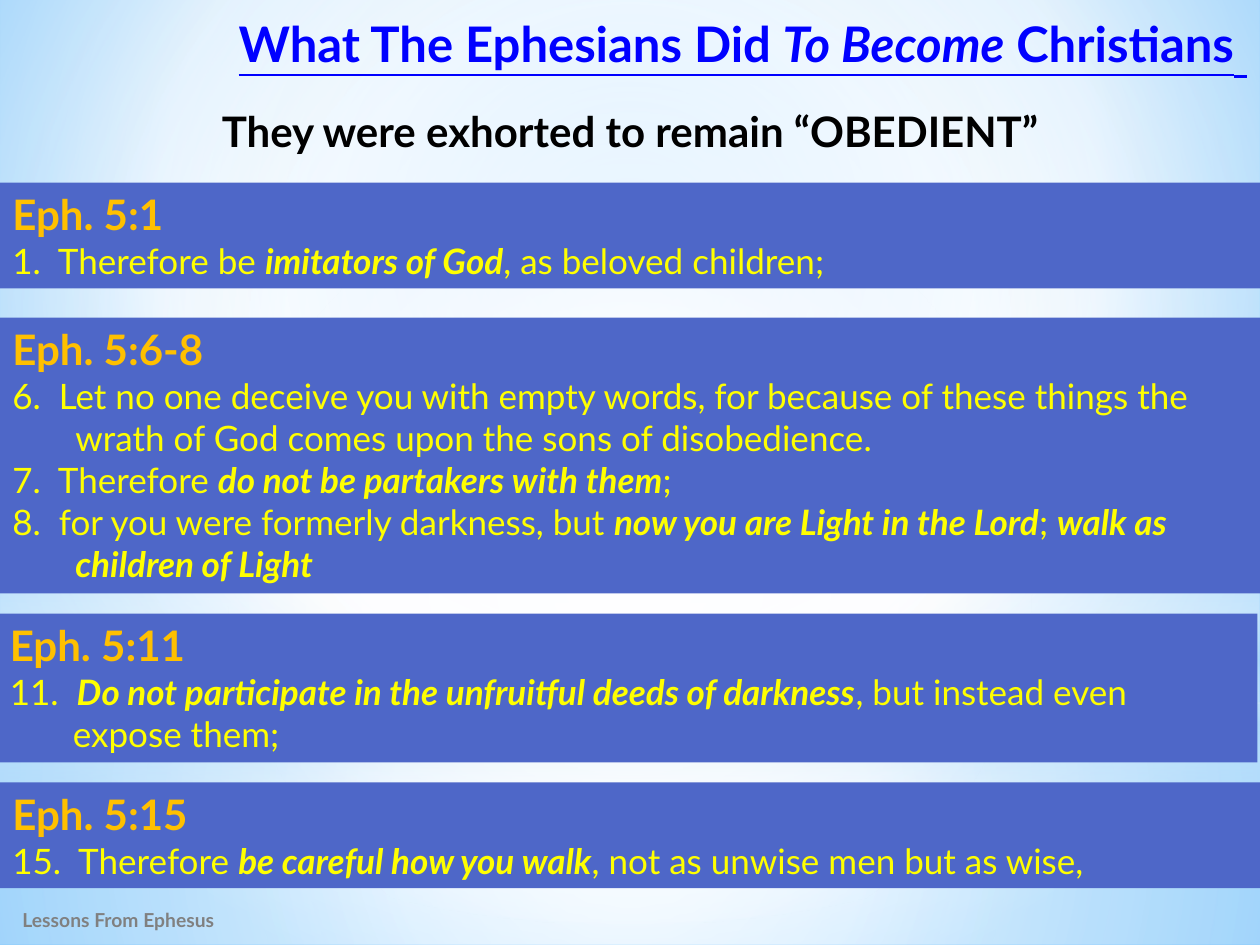
import pptx
import pptx.util
import pptx.dml.color
import pptx.enum.shapes
import pptx.enum.text
import pptx.oxml
import pptx.oxml.ns
from dataclasses import dataclass

Inches, Pt = pptx.util.Inches, pptx.util.Pt
SHAPE = pptx.enum.shapes.MSO_SHAPE
ALIGN = pptx.enum.text.PP_ALIGN
ANCHOR = pptx.enum.text.MSO_ANCHOR


@dataclass(frozen=True)
class Theme:
    font: str = "Lato"
    title: str = "0000FF"
    subtitle: str = "000000"
    panel: str = "4E67C8"
    reference: str = "FFC000"
    verse: str = "FFFF00"
    footer: str = "808080"
    white: str = "FFFFFF"
    sky: str = "B4DCFA"
    title_size: int = 28
    title_end_size: int = 32
    heading_size: int = 24
    verse_size: int = 20
    footer_size: int = 11


T = Theme()
CENTER = (50, 50, 50, 50)


def set_gradient(fill, element, stops, focus=None):
    """Stops are (position %, colour, opacity %); focus is l, t, r, b in %."""
    fill.gradient()
    old = element.find(".//" + pptx.oxml.ns.qn("a:gradFill"))
    gs = "".join(
        f'<a:gs pos="{pos * 1000}"><a:srgbClr val="{color}">'
        f'<a:alpha val="{alpha * 1000}"/></a:srgbClr></a:gs>'
        for pos, color, alpha in stops)
    if focus:
        sides = " ".join(f'{k}="{v * 1000}"' for k, v in zip("ltrb", focus))
        direction = f'<a:path path="circle"><a:fillToRect {sides}/></a:path>'
    else:
        direction = '<a:lin ang="5400000" scaled="0"/>'
    new = pptx.oxml.parse_xml(
        f'<a:gradFill {pptx.oxml.ns.nsdecls("a")} rotWithShape="1">'
        f'<a:gsLst>{gs}</a:gsLst>{direction}</a:gradFill>')
    old.getparent().replace(old, new)


def add_plain_shape(s, kind, box):
    sp = s.shapes.add_shape(kind, *map(Inches, box))
    sp.shadow.inherit = False
    sp.line.fill.background()
    return sp


def add_run(p, text, size, color, bold=False, italic=False, underline=None):
    r = p.add_run()
    r.text = text
    r.font.name = T.font
    r.font.size = Pt(size)
    r.font.bold = bold
    r.font.italic = italic
    r.font.underline = underline
    r.font.color.rgb = pptx.dml.color.RGBColor.from_string(color)


def add_text_box(s, box, align=ALIGN.LEFT, anchor=ANCHOR.TOP):
    tf = s.shapes.add_textbox(*map(Inches, box)).text_frame
    tf.word_wrap = True
    tf.vertical_anchor = anchor
    tf.paragraphs[0].alignment = align
    return tf.paragraphs[0]


def hang(p):
    pPr = p._p.get_or_add_pPr()
    pPr.set("marL", str(Inches(0.5)))
    pPr.set("indent", str(-Inches(0.5)))


def add_backdrop(s, width):
    set_gradient(s.background.fill, s._element,
                 [(0, "9ED5FF", 100), (60, T.white, 100), (100, "5BB9FF", 100)],
                 (20, 10, 20, 60))
    layers = [
        (SHAPE.RECTANGLE, 5.58, 1.92, CENTER,
         [(0, T.white, 91), (37, T.white, 76), (100, T.sky, 79)]),
        (SHAPE.RECTANGLE, 0, 5.58, CENTER,
         [(0, T.white, 89), (48, T.white, 62), (100, T.sky, 79)]),
        (SHAPE.RECTANGLE, 4.12, 2.5, None,
         [(0, T.white, 0), (29, T.white, 30), (45, T.sky, 40),
          (55, T.white, 26), (65, T.sky, 60), (100, T.white, 0)]),
        (SHAPE.OVAL, 1.75, 5.58, CENTER,
         [(0, T.white, 100), (56, T.white, 0)]),
    ]
    for kind, top, height, focus, stops in layers:
        sp = add_plain_shape(s, kind, (0, top, width, height))
        set_gradient(sp.fill, sp._element, stops, focus)


def add_title(s, box):
    p = add_text_box(s, box, ALIGN.RIGHT)
    for text, size, italic in [
            ("What The Ephesians Did ", T.title_size, False),
            ("To Become", T.title_size, True),
            (" Christians", T.title_size, False),
            (" ", T.title_end_size, False)]:
        add_run(p, text, size, T.title, True, italic, True)


def add_subtitle(s, box):
    p = add_text_box(s, box, ALIGN.CENTER)
    hang(p)
    add_run(p, "They were exhorted to remain “OBEDIENT”",
            T.heading_size, T.subtitle, True)


def add_footer(s, box):
    p = add_text_box(s, box, anchor=ANCHOR.MIDDLE)
    add_run(p, "Lessons From Ephesus", T.footer_size, T.footer, True)


def add_passage(s, box, reference, verses):
    """Each verse alternates plain and emphasised text."""
    sp = add_plain_shape(s, SHAPE.RECTANGLE, box)
    sp.fill.solid()
    sp.fill.fore_color.rgb = pptx.dml.color.RGBColor.from_string(T.panel)
    tf = sp.text_frame
    tf.word_wrap = True
    tf.vertical_anchor = ANCHOR.TOP
    p = tf.paragraphs[0]
    add_run(p, reference, T.heading_size, T.reference, True)
    for verse in verses:
        p = tf.add_paragraph()
        for i, text in enumerate(verse):
            strong = i % 2 == 1
            add_run(p, text, T.verse_size, T.verse, strong, strong)
    for p in tf.paragraphs:
        p.alignment = ALIGN.LEFT
        hang(p)


PASSAGES = [
    ((0, 1.45, 10, 0.84), "Eph. 5:1", [
        ("1.  Therefore be ", "imitators of God", ", as beloved children;")]),
    ((0, 2.52, 10, 2.19), "Eph. 5:6-8", [
        ("6.  Let no one deceive you with empty words, for because of these "
         "things the wrath of God comes upon the sons of disobedience.",),
        ("7.  Therefore ", "do not be partakers with them", ";"),
        ("8.  for you were formerly darkness, but ",
         "now you are Light in the Lord", "; ",
         "walk as children of Light")]),
    ((-0.02, 4.87, 10, 1.18), "Eph. 5:11", [
        ("11.  ", "Do not participate in the unfruitful deeds of darkness",
         ", but instead even expose them;")]),
    ((0, 6.21, 10, 0.84), "Eph. 5:15", [
        ("15.  Therefore ", "be careful how you walk",
         ", not as unwise men but as wise,")]),
]


def main():
    prs = pptx.Presentation()
    prs.slide_width, prs.slide_height = Inches(10), Inches(7.5)
    s = prs.slides.add_slide(prs.slide_layouts[6])
    add_backdrop(s, 10)
    add_footer(s, (0.08, 7.1, 3.67, 0.4))
    add_title(s, (0, 0, 10, 0.67))
    add_subtitle(s, (0, 0.79, 10, 0.5))
    for box, reference, verses in PASSAGES:
        add_passage(s, box, reference, verses)
    prs.save("out.pptx")


if __name__ == "__main__":
    main()
